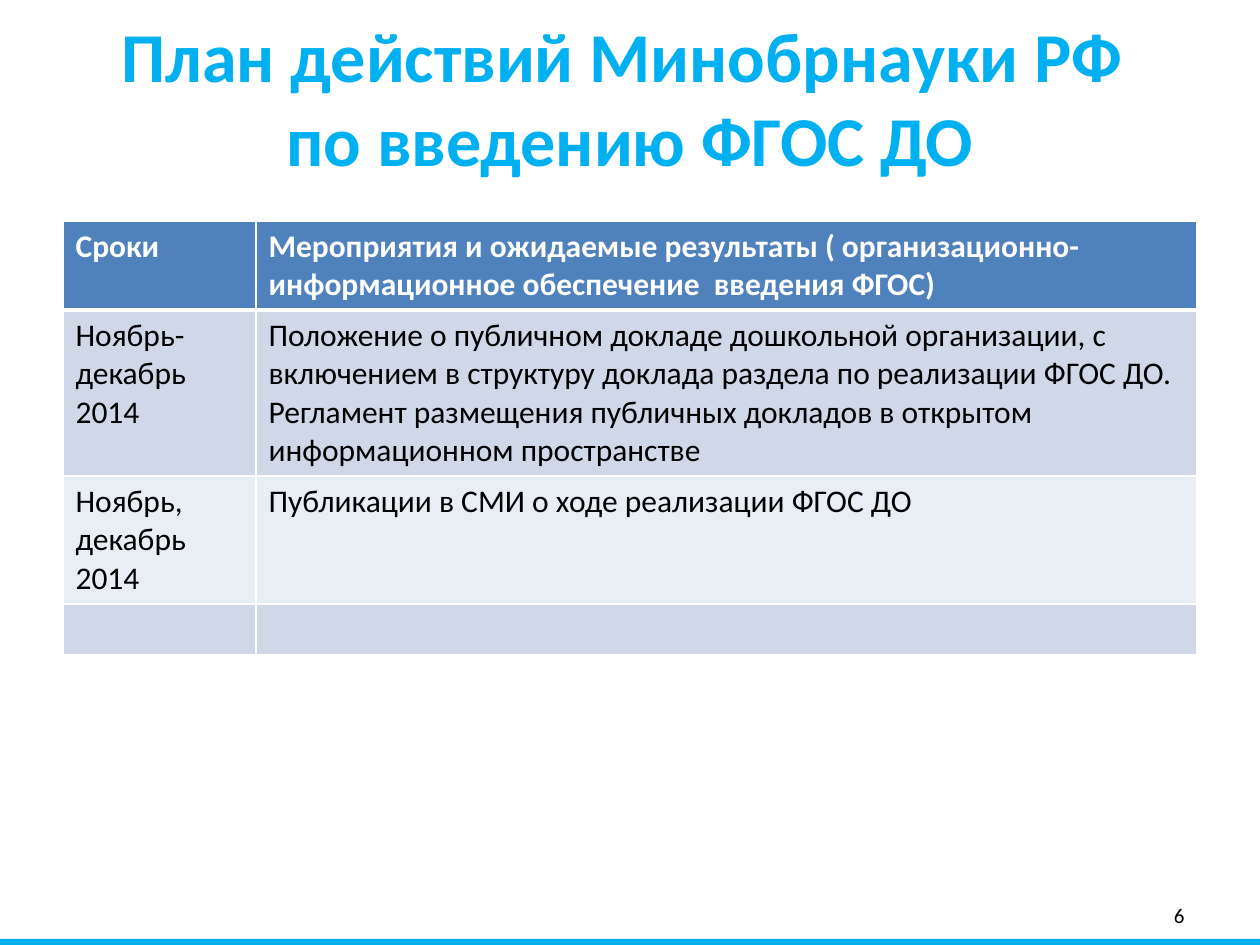
from lxml import etree
from pptx import Presentation
from pptx.dml.color import RGBColor
from pptx.enum.shapes import MSO_SHAPE
from pptx.enum.text import MSO_ANCHOR, PP_ALIGN
from pptx.oxml.ns import qn
from pptx.util import Pt

RECTANGLE = MSO_SHAPE.RECTANGLE
TOP, MIDDLE = MSO_ANCHOR.TOP, MSO_ANCHOR.MIDDLE
LEFT, CENTER, RIGHT = PP_ALIGN.LEFT, PP_ALIGN.CENTER, PP_ALIGN.RIGHT
FONT = "Calibri"
COLORS = {
    "accent": "00B0F0",
    "header": "4F81BD",
    "odd": "D0D8E8",
    "even": "E9EDF4",
    "white": "FFFFFF",
    "black": "000000",
}
PLAN = [
    ("Сроки", "Мероприятия и ожидаемые результаты ( организационно-"
              "информационное обеспечение  введения ФГОС)"),
    ("Ноябрь- декабрь 2014",
     "Положение о публичном докладе дошкольной организации, с включением "
     "в структуру доклада раздела по реализации ФГОС ДО. Регламент размещения "
     "публичных докладов в открытом информационном пространстве"),
    ("Ноябрь, декабрь 2014", "Публикации в СМИ о ходе реализации ФГОС ДО"),
    ("", ""),
]
COLUMN_WIDTHS = (193, 941)
ROW_HEIGHTS = (89, 166, 128, 51)


def px(length):
    """Turn px at 126 to the inch into EMU."""
    return round(length * 914400 / 126)


def color(name):
    """Look up a named colour."""
    return RGBColor.from_string(COLORS[name])


def style(paragraph, size, tint, bold=False, align=LEFT):
    """Set the font and alignment of a paragraph."""
    paragraph.alignment = align
    font = paragraph.font
    font.name, font.size, font.bold = FONT, Pt(size), bold
    font.color.rgb = color(tint)


def add_label(slide, box, text, anchor, **look):
    """Place one styled paragraph in a text box."""
    frame = slide.shapes.add_textbox(*map(px, box)).text_frame
    frame.word_wrap = True
    frame.vertical_anchor = anchor
    frame.text = text
    style(frame.paragraphs[0], **look)


def add_footer_band(slide, box):
    """Draw the coloured band along the foot of the slide."""
    band = slide.shapes.add_shape(RECTANGLE, *map(px, box))
    band.shadow.inherit = False
    band.fill.solid()
    band.fill.fore_color.rgb = color("accent")
    band.line.fill.background()


def add_borders(cell, top, bottom):
    """Give a cell white borders, with top and bottom widths in points."""
    properties = cell._tc.get_or_add_tcPr()
    for side, width in (("L", 1), ("R", 1), ("T", top), ("B", bottom)):
        line = etree.SubElement(properties, qn(f"a:ln{side}"), w=str(Pt(width)))
        fill = etree.SubElement(line, qn("a:solidFill"))
        etree.SubElement(fill, qn("a:srgbClr"), val=COLORS["white"])


def add_plan_table(slide, left, top):
    """Build the banded table of dates and measures."""
    box = (left, top, sum(COLUMN_WIDTHS), sum(ROW_HEIGHTS))
    table = slide.shapes.add_table(
        len(PLAN), len(COLUMN_WIDTHS), *map(px, box)).table
    for column, width in zip(table.columns, COLUMN_WIDTHS):
        column.width = px(width)
    for index, (row, height) in enumerate(zip(table.rows, ROW_HEIGHTS)):
        row.height = px(height)
        is_header = index == 0
        band = "header" if is_header else ("even", "odd")[index % 2]
        for cell, text in zip(row.cells, PLAN[index]):
            add_borders(cell, 3 if index == 1 else 1, 3 if is_header else 1)
            cell.fill.solid()
            cell.fill.fore_color.rgb = color(band)
            cell.text = text
            style(cell.text_frame.paragraphs[0], 18,
                  "white" if is_header else "black", is_header)


def main():
    """Build the slide and save it."""
    presentation = Presentation()
    presentation.slide_width, presentation.slide_height = px(1260), px(945)
    slide = presentation.slides.add_slide(presentation.slide_layouts[6])
    add_footer_band(slide, (0, 939, 1260, 6))
    add_label(slide, (63, 6, 1134, 158),
              "План действий Минобрнауки РФ \vпо введению ФГОС ДО", TOP,
              size=40, tint="accent", bold=True, align=CENTER)
    add_label(slide, (903, 890, 294, 50), "6", MIDDLE,
              size=12, tint="black", align=RIGHT)
    add_plan_table(slide, 63, 221)
    presentation.save("out.pptx")


if __name__ == "__main__":
    main()
